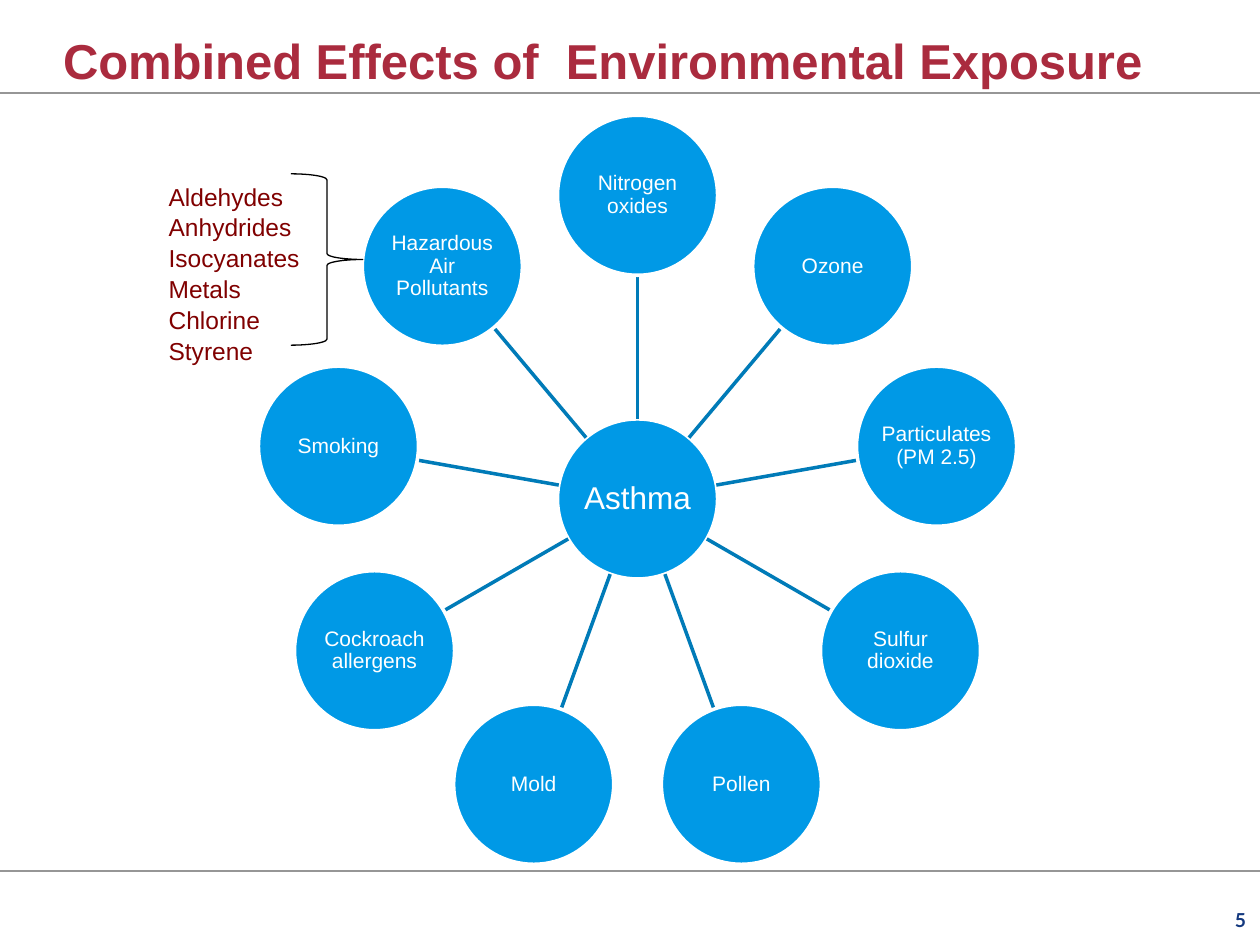
from math import cos, radians, sin

from pptx import Presentation
from pptx import util as u
from pptx.dml.color import RGBColor
from pptx.enum import shapes, text
from pptx.oxml.ns import qn
from lxml import etree

TITLE = "Combined Effects of  Environmental Exposure"
PAGE = "5"
HUB = "Asthma"
CAUSES = [
    "Nitrogen oxides", "Ozone", "Particulates (PM 2.5)", "Sulfur dioxide",
    "Pollen", "Mold", "Cockroach allergens", "Smoking",
    "Hazardous Air Pollutants",
]
TOXINS = ["Aldehydes", "Anhydrides", "Isocyanates", "Metals", "Chlorine", "Styrene"]

THEME = {
    "font": "Arial", "page font": "Lato",
    "title": "AA2B3E", "page": "14397F", "rule": "969696", "disc": "0099E6",
    "spoke": "007BB8", "light": "FFFFFF", "list": "800000", "brace": "000000",
    "title size": 28, "hub size": 18, "disc size": 12, "list size": 14,
    "page size": 11,
}
WIDE, HIGH = 10, 7.5
RULES = (0.74, 6.91)
MID = (WIDE * 0.506, HIGH * 0.528)
DISC = 1.27
RING = 2.41
ALIGN, ANCHOR = text.PP_ALIGN, text.MSO_ANCHOR


def tint(name):
    return RGBColor.from_string(THEME[name])


def polar(turn, dist):
    return MID[0] + dist * sin(turn), MID[1] - dist * cos(turn)


def write(shape, lines, size, color, align, anchor, pad=0, bold=False,
          font="font", lead=None, wrap=True):
    frame = shape.text_frame
    frame.word_wrap = wrap
    frame.vertical_anchor = anchor
    frame.margin_left = frame.margin_right = u.Inches(pad)
    frame.margin_top = frame.margin_bottom = u.Inches(pad / 2)
    frame.text = "\n".join(lines)
    for para in frame.paragraphs:
        para.alignment = align
        para.line_spacing = lead
        for run in para.runs:
            run.font.name = THEME[font]
            run.font.size = u.Pt(THEME[size])
            run.font.bold = bold
            run.font.color.rgb = tint(color)


def label(slide, box, *args, **style):
    write(slide.shapes.add_textbox(*map(u.Inches, box)), *args, **style)


def stroke(slide, start, end, color, width):
    line = slide.shapes.add_connector(
        shapes.MSO_CONNECTOR.STRAIGHT, *map(u.Inches, (*start, *end)))
    line.line.color.rgb = tint(color)
    line.line.width = u.Pt(width)
    etree.SubElement(line._element.spPr, qn("a:effectLst"))


def preset(slide, kind, box, color, width):
    shape = slide.shapes.add_shape(kind, *map(u.Inches, box))
    shape.shadow.inherit = False
    shape.line.color.rgb = tint(color)
    shape.line.width = u.Pt(width)
    return shape


def disc(slide, spot, name, size):
    box = (spot[0] - DISC / 2, spot[1] - DISC / 2, DISC, DISC)
    shape = preset(slide, shapes.MSO_SHAPE.OVAL, box, "light", 2)
    shape.fill.solid()
    shape.fill.fore_color.rgb = tint("disc")
    write(shape, [name], size, "light", ALIGN.CENTER, ANCHOR.MIDDLE,
          pad=0.01, lead=0.9)


def main():
    deck = Presentation()
    deck.slide_width, deck.slide_height = u.Inches(WIDE), u.Inches(HIGH)
    slide = deck.slides.add_slide(deck.slide_layouts[6])

    label(slide, (9.73, 7.21, 0.16, 0.18), [PAGE], "page size", "page",
          ALIGN.RIGHT, ANCHOR.BOTTOM, bold=True, font="page font", wrap=False)
    for y in RULES:
        stroke(slide, (0, y), (WIDE, y), "rule", 1)
    label(slide, (0.5, 0.1, 9.32, 0.61), [TITLE], "title size", "title",
          ALIGN.LEFT, ANCHOR.BOTTOM, bold=True)

    disc(slide, MID, HUB, "hub size")
    for i, name in enumerate(CAUSES):
        turn = radians(360 / len(CAUSES) * i)
        stroke(slide, polar(turn, DISC / 2), polar(turn, RING - DISC / 2),
               "spoke", 2)
        disc(slide, polar(turn, RING), name, "disc size")

    brace = preset(slide, shapes.MSO_SHAPE.RIGHT_BRACE,
                   (2.31, 1.38, 0.57, 1.36), "brace", 0.75)
    brace.fill.background()
    label(slide, (1.24, 1.38, 1.46, 1.51), TOXINS, "list size", "list",
          ALIGN.LEFT, ANCHOR.TOP, pad=0.1, lead=1.05)
    deck.save("out.pptx")


if __name__ == "__main__":
    main()
